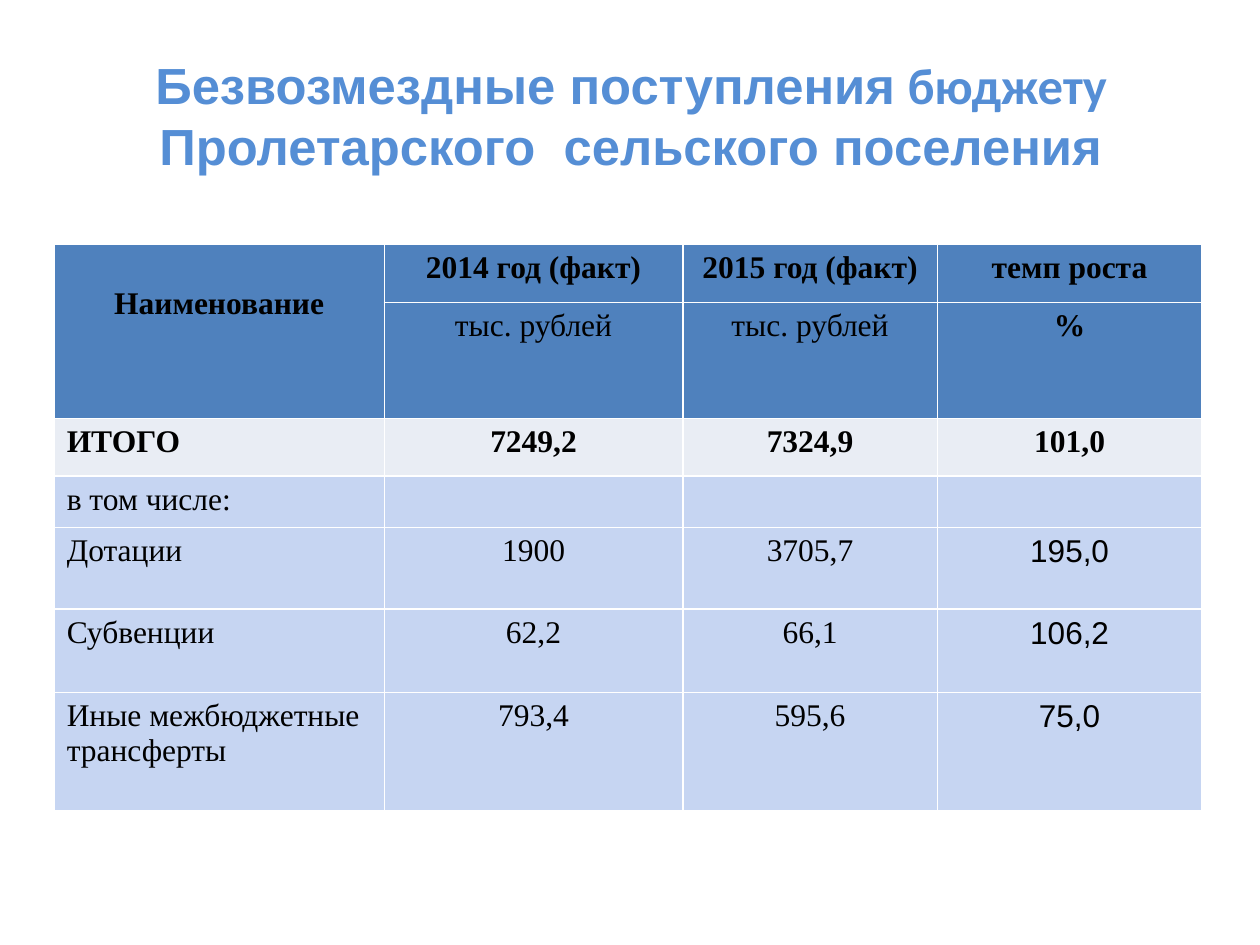
from lxml.etree import SubElement
from pptx import Presentation
from pptx.dml.color import RGBColor
from pptx.enum.text import MSO_ANCHOR, MSO_AUTO_SIZE, PP_ALIGN
from pptx.oxml.ns import qn
from pptx.util import Inches, Pt

# Content
TITLE = [
    ("Безвозмездные поступления", "Arial"),
    (" бюджету ", "Calibri"),
    ("Пролетарского  сельского поселения", "Arial"),
]
ROWS = [
    ("Наименование", "2014 год (факт)", "2015 год (факт)", "темп роста"),
    ("", "тыс. рублей", "тыс. рублей", "%"),
    ("ИТОГО", "7249,2", "7324,9", "101,0"),
    ("в том числе:", "", "", ""),
    ("Дотации", "1900", "3705,7", "195,0"),
    ("Субвенции", "62,2", "66,1", "106,2"),
    ("Иные межбюджетные трансферты", "793,4", "595,6", "75,0"),
]
WIDTHS = [2.62, 2.37, 2.02, 2.1]
HEIGHTS = [0.46, 0.92, 0.46, 0.38, 0.65, 0.66, 0.94]
HEAD, TOTAL, BODY = "4F81BD", "E9EDF4", "C6D5F2"
FILLS = [HEAD, HEAD, TOTAL] + [BODY] * 4


def color(code):
    return RGBColor.from_string(code)


def style(font, code, **form):
    for key, value in form.items():
        setattr(font, key, value)
    font.color.rgb = color(code)


def border(cell, code="FFFFFF", width=1):
    props = cell._tc.get_or_add_tcPr()
    for spot, side in enumerate(("lnL", "lnR", "lnT", "lnB")):
        line = props.makeelement(qn("a:" + side), {"w": str(Pt(width))})
        fill = SubElement(line, qn("a:solidFill"))
        SubElement(fill, qn("a:srgbClr"), val=code)
        props.insert(spot, line)


def place(shape, left, top, width, height):
    box = dict(left=left, top=top, width=width, height=height)
    for key, value in box.items():
        setattr(shape, key, Inches(value))


deck = Presentation()
deck.slide_width, deck.slide_height = Inches(10), Inches(7.5)
slide = deck.slides.add_slide(deck.slide_layouts[5])

# Title
title = slide.shapes.title
place(title, 0.51, 0.36, 9, 1.1)
frame = title.text_frame
frame.word_wrap = True
frame.auto_size = MSO_AUTO_SIZE.NONE
frame.vertical_anchor = MSO_ANCHOR.MIDDLE
para = frame.paragraphs[0]
para.alignment = PP_ALIGN.CENTER
for text, name in TITLE:
    run = para.add_run()
    run.text = text
    style(run.font, "558ED5", name=name, size=Pt(29), bold=True)

# Table grid
table = slide.shapes.add_table(
    len(ROWS), len(WIDTHS), Inches(0.43), Inches(1.94),
    Inches(sum(WIDTHS)), Inches(sum(HEIGHTS))).table
for col, width in zip(table.columns, WIDTHS):
    col.width = Inches(width)
for row, height in zip(table.rows, HEIGHTS):
    row.height = Inches(height)

# Table cells
for r, words in enumerate(ROWS):
    for c, text in enumerate(words):
        cell = table.cell(r, c)
        cell.fill.solid()
        cell.fill.fore_color.rgb = color(FILLS[r])
        border(cell)
        para = cell.text_frame.paragraphs[0]
        if c or r == 0:
            para.alignment = PP_ALIGN.CENTER
        if not text:
            para.font.size = Pt(18)
            continue
        run = para.add_run()
        run.text = text
        name = "Arial" if c == 3 and r > 3 else "Times New Roman"
        bold = r in (0, 2) or text == "%"
        style(run.font, "000000", name=name, size=Pt(18), bold=bold)

# The first heading spans both header rows, one line down
head = table.cell(0, 0)
head.merge(table.cell(1, 0))
head.margin_top = Inches(0.33)

deck.save("out.pptx")
